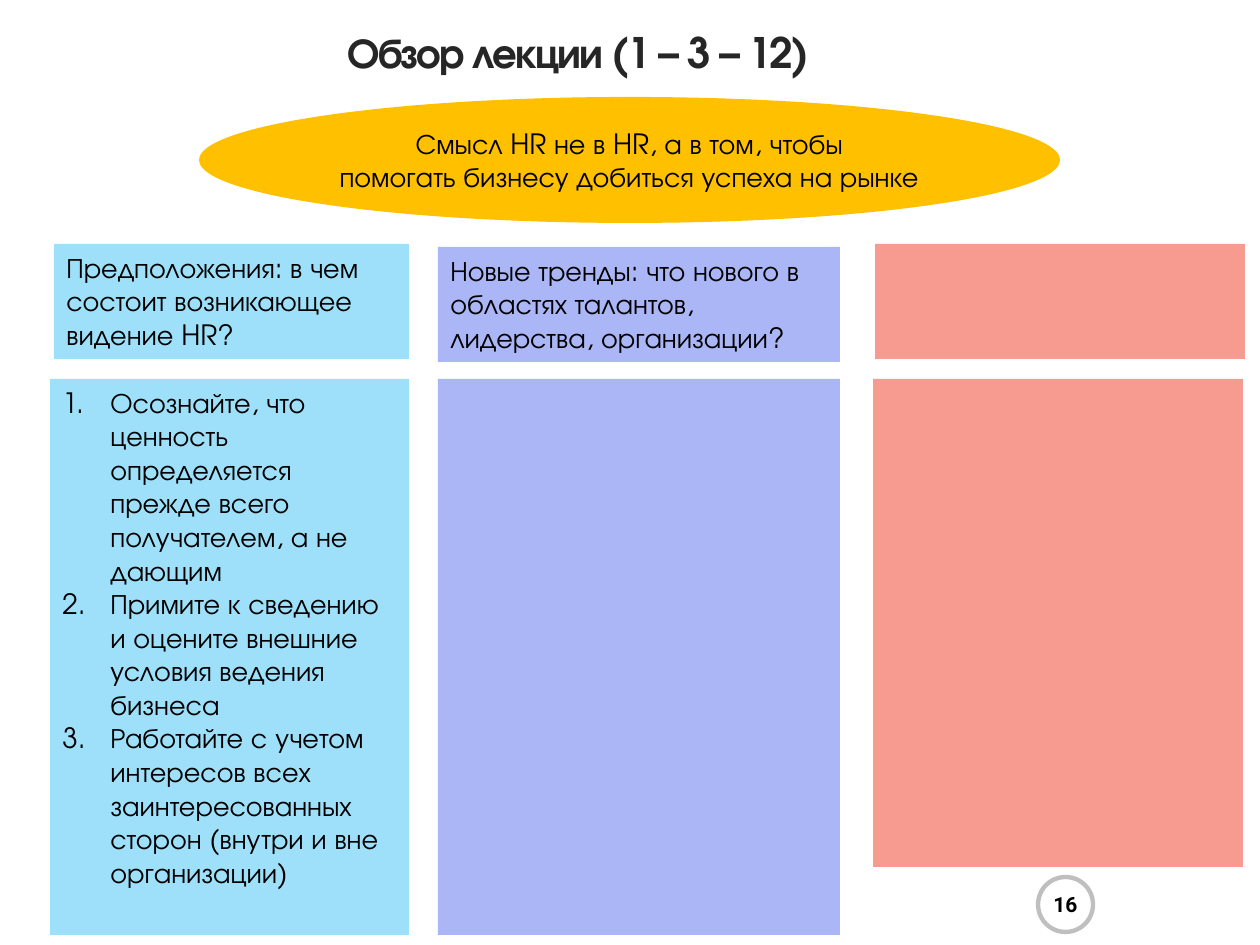
from lxml.etree import SubElement
from pptx import Presentation
from pptx.dml.color import RGBColor
from pptx.enum.shapes import MSO_SHAPE
from pptx.enum.text import MSO_ANCHOR, PP_ALIGN
from pptx.oxml.ns import qn
from pptx.util import Pt

PX = 914400 / 126
THEME = {
    "font": "TeX Gyre Adventor", "digit": "Roboto",
    "head": 24, "body": 16, "small": 12,
    "black": "000000", "dark": "262626", "white": "FFFFFF", "grey": "BFBFBF",
    "gold": "FFC000", "blue": "00B0F0", "violet": "2843E8", "red": "F4695A",
}


def write(shape, lines, size="body", color="black", font="font", bold=False,
          align=PP_ALIGN.LEFT, anchor=MSO_ANCHOR.TOP, number=False, lead=None, track=None):
    frame = shape.text_frame
    frame.word_wrap = True
    frame.vertical_anchor = anchor
    for i, line in enumerate(lines):
        para = frame.paragraphs[0] if i == 0 else frame.add_paragraph()
        para.alignment = align
        if lead:
            para.line_spacing = Pt(lead)
        if number:
            props = para._p.get_or_add_pPr()
            props.set("marL", str(round(48 * PX)))
            props.set("indent", str(round(-48 * PX)))
            SubElement(props, qn("a:buFont"), typeface="+mj-lt")
            SubElement(props, qn("a:buAutoNum"), type="arabicPeriod")
        run = para.add_run()
        run.text = line
        run.font.name = THEME[font]
        run.font.size = Pt(THEME[size])
        run.font.bold = bold
        run.font.color.rgb = RGBColor.from_string(THEME[color])
        if track:
            run._r.get_or_add_rPr().set("spc", str(track))


def draw(kind, box, color, alpha=100, line=None):
    shape = slide.shapes.add_shape(kind, *[round(n * PX) for n in box])
    shape.shadow.inherit = False
    shape.fill.solid()
    shape.fill.fore_color.rgb = RGBColor.from_string(THEME[color])
    if alpha < 100:
        tint = shape._element.spPr.find(".//" + qn("a:srgbClr"))
        SubElement(tint, qn("a:alpha"), val=str(alpha * 1000))
    if line:
        shape.line.color.rgb = RGBColor.from_string(THEME[line])
        shape.line.width = Pt(2.5)
    else:
        shape.line.fill.background()
    return shape


deck = Presentation()
deck.slide_width, deck.slide_height = round(1260 * PX), round(945 * PX)
slide = deck.slides.add_slide(deck.slide_layouts[5])

title = slide.shapes.title
title.left, title.top, title.width, title.height = [round(n * PX) for n in (40, 6, 1077, 98)]
write(title, ["Обзор лекции (1 – 3 – 12)"], size="head", color="dark", bold=True,
      align=PP_ALIGN.CENTER, anchor=MSO_ANCHOR.MIDDLE, lead=25.1, track=-110)

oval = draw(MSO_SHAPE.OVAL, (199, 97, 861, 126), "gold")
write(oval, ["Смысл HR не в HR, а в том, чтобы", "помогать бизнесу добиться успеха на рынке"],
      align=PP_ALIGN.CENTER, anchor=MSO_ANCHOR.MIDDLE)

columns = [
    ("blue", 38, (54, 244, 355, 115), (50, 379, 359, 556),
     "Предположения: в чем состоит возникающее видение HR?",
     ["Осознайте, что ценность определяется прежде всего получателем, а не дающим",
      "Примите к сведению и оцените внешние условия ведения бизнеса",
      "Работайте с учетом интересов всех заинтересованных сторон (внутри и вне организации)"]),
    ("violet", 39, (438, 247, 402, 115), (438, 379, 402, 556),
     "Новые тренды: что нового в областях талантов, лидерства, организации?", []),
    ("red", 67, (875, 244, 370, 115), (873, 379, 370, 488), "", []),
]
for color, alpha, top, base, head, items in columns:
    cap = draw(MSO_SHAPE.RECTANGLE, top, color, alpha)
    if head:
        write(cap, [head])
    body = draw(MSO_SHAPE.RECTANGLE, base, color, alpha)
    write(body, items, number=True)

badge = draw(MSO_SHAPE.OVAL, (1038, 877, 55, 55), "white", 25, line="grey")
page = slide.shapes.add_textbox(*[round(n * PX) for n in (1039, 882, 53, 45)])
frame = page.text_frame
frame.margin_left = frame.margin_right = frame.margin_top = frame.margin_bottom = 0
write(page, ["16"], size="small", font="digit", bold=True,
      align=PP_ALIGN.CENTER, anchor=MSO_ANCHOR.MIDDLE)

deck.save("out.pptx")
